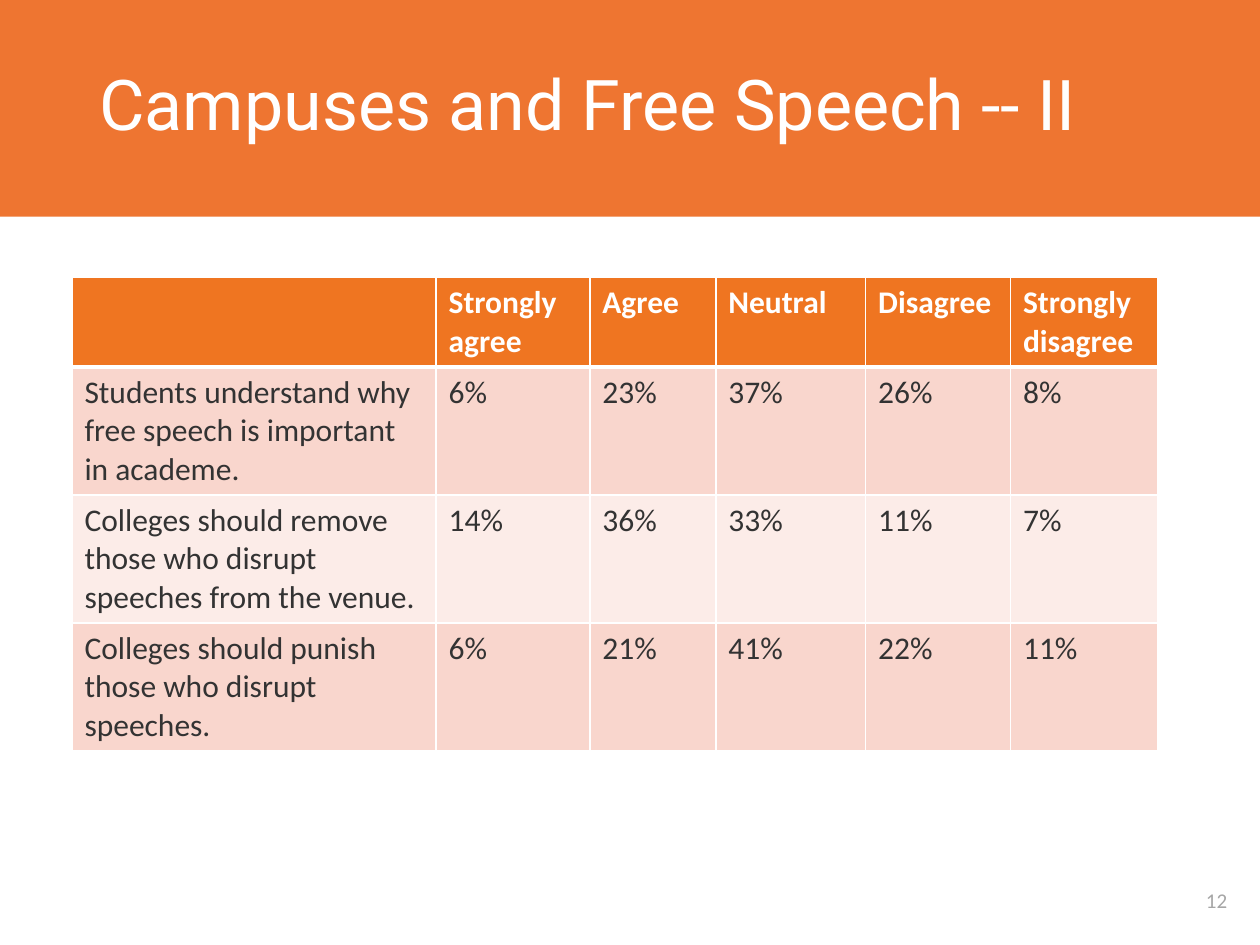
"""Build the survey slide on campuses and free speech."""
from dataclasses import dataclass

from lxml.etree import SubElement as Sub
from pptx import Presentation
from pptx.dml.color import RGBColor as Rgb
from pptx.enum.shapes import MSO_SHAPE as Kind
from pptx.enum.text import MSO_ANCHOR as Anchor, MSO_AUTO_SIZE as Fit, PP_ALIGN as Align
from pptx.oxml.ns import qn
from pptx.slide import Slide
from pptx.table import _Cell as Cell
from pptx.text.text import Font
from pptx.util import Cm, Pt


@dataclass(frozen=True)
class Theme:
    band: str = "EE7531"
    head: str = "EF7521"
    odd: str = "F9D6CD"
    even: str = "FCECE8"
    ink: str = "333333"
    pale: str = "FFFFFF"
    mute: str = "A6A6A6"
    face: str = "Roboto"
    body: str = "Calibri"
    big: int = 40
    mid: int = 18
    small: int = 12


@dataclass(frozen=True)
class Row:
    label: str
    shares: tuple[int, ...]


THEME = Theme()
HEADS = ("", "Strongly agree", "Agree", "Neutral", "Disagree", "Strongly disagree")
ROWS = (
    Row("Students understand why free speech is important in academe.", (6, 23, 37, 26, 8)),
    Row("Colleges should remove those who disrupt speeches from the venue.", (14, 36, 33, 11, 7)),
    Row("Colleges should punish those who disrupt speeches.", (6, 21, 41, 22, 11)),
)
WIDTHS = (7.34, 3.1, 2.54, 3.02, 2.92, 2.97)
HEAD_H, ROW_H = 1.78, 2.58


def style(font: Font, name: str, size: int, color: str, bold: bool = False) -> None:
    font.name, font.size, font.bold = name, Pt(size), bold
    font.color.rgb = Rgb.from_string(color)


def edge(cell: Cell, top: int, base: int) -> None:
    props = cell._tc.get_or_add_tcPr()
    for side, width in (("L", 1), ("R", 1), ("T", top), ("B", base)):
        line = Sub(props, qn(f"a:ln{side}"), w=str(Pt(width)))
        Sub(Sub(line, qn("a:solidFill")), qn("a:srgbClr"), val=THEME.pale)


def draw_title(slide: Slide) -> None:
    title = slide.shapes.title
    band = slide.shapes.add_shape(Kind.RECTANGLE, Cm(-0.02), 0, Cm(25.45), Cm(4.37))
    band.shadow.inherit = False
    band.fill.solid()
    band.fill.fore_color.rgb = Rgb.from_string(THEME.band)
    band.line.fill.background()
    title._element.addprevious(band._element)
    title.left, title.top, title.width, title.height = Cm(1.75), 0, Cm(21.89), Cm(4.34)
    frame = title.text_frame
    frame.text = "Campuses and Free Speech -- II"
    frame.auto_size, frame.vertical_anchor = Fit.NONE, Anchor.MIDDLE
    para = frame.paragraphs[0]
    para.alignment, para.line_spacing = Align.LEFT, 0.9
    style(para.font, THEME.face, THEME.big, THEME.pale)


def draw_table(slide: Slide) -> None:
    lines = [HEADS] + [(row.label, *(f"{share}%" for share in row.shares)) for row in ROWS]
    high = HEAD_H + ROW_H * len(ROWS)
    grid = slide.shapes.add_table(
        len(lines), len(HEADS), Cm(1.45), Cm(5.59), Cm(sum(WIDTHS)), Cm(high)).table
    for col, width in zip(grid.columns, WIDTHS):
        col.width = Cm(width)
    for i, line in enumerate(lines):
        grid.rows[i].height = Cm(ROW_H if i else HEAD_H)
        fill = (THEME.odd if i % 2 else THEME.even) if i else THEME.head
        for j, text in enumerate(line):
            cell = grid.cell(i, j)
            edge(cell, top=3 if i == 1 else 1, base=1 if i else 3)
            cell.fill.solid()
            cell.fill.fore_color.rgb = Rgb.from_string(fill)
            cell.text = text
            style(cell.text_frame.paragraphs[0].font, THEME.body, THEME.mid,
                  THEME.ink if i else THEME.pale, bold=not i)


def draw_number(slide: Slide) -> None:
    frame = slide.shapes.add_textbox(Cm(23.65), Cm(17.65), Cm(1.75), Cm(0.99)).text_frame
    frame.word_wrap, frame.vertical_anchor = True, Anchor.MIDDLE
    frame.text = "12"
    para = frame.paragraphs[0]
    para.alignment = Align.CENTER
    style(para.font, THEME.body, THEME.small, THEME.mute)


def main() -> None:
    deck = Presentation()
    deck.slide_width, deck.slide_height = Cm(25.4), Cm(19.05)
    slide = deck.slides.add_slide(deck.slide_layouts[5])
    draw_title(slide)
    draw_table(slide)
    draw_number(slide)
    deck.save("out.pptx")


if __name__ == "__main__":
    main()
